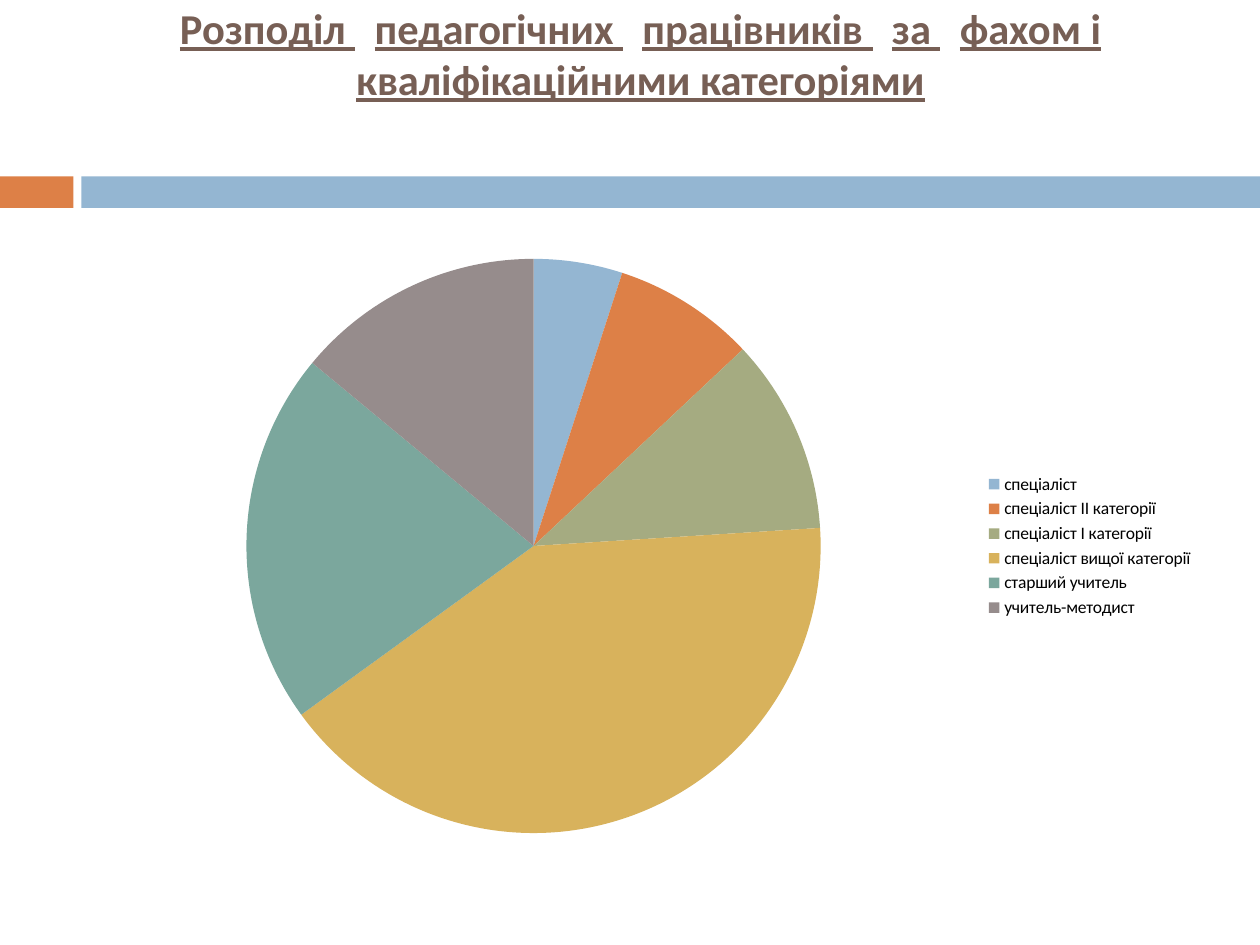
import pptx
import pptx.chart.data
import pptx.dml.color
import pptx.enum.chart
import pptx.enum.shapes
import pptx.enum.text
import pptx.util

Pt = pptx.util.Pt
SLIDE_WIDTH, SLIDE_HEIGHT = 720, 540
BAND_TOP, BAND_HEIGHT = 100.8, 18
BLUE, ORANGE, BROWN = "94B6D2", "DD8047", "775F55"

# category: (share in percent, colour)
CATEGORIES = {
    "спеціаліст": (5, BLUE),
    "спеціаліст ІІ категорії": (8, ORANGE),
    "спеціаліст І категорії": (11, "A5AB81"),
    "спеціаліст вищої категорії": (41, "D8B25C"),
    "старший учитель": (21, "7BA79D"),
    "учитель-методист": (14, "968C8C"),
}
TITLE_PARTS = ["Розподіл", "педагогічних", "працівників", "за", "фахом і",
               "кваліфікаційними категоріями"]


def colour(hex_string):
    return pptx.dml.color.RGBColor.from_string(hex_string)


def paint(fill, hex_string):
    fill.solid()
    fill.fore_color.rgb = colour(hex_string)


class Deck:
    font_name = "Calibri"

    def __init__(self, presentation):
        self.slide = presentation.slides.add_slide(presentation.slide_layouts[5])

    def title(self, parts, left, top, width, height, size, gap):
        """Join the parts with single spaces, each widened by gap points."""
        heading = self.slide.shapes.title
        heading.left, heading.top = Pt(left), Pt(top)
        heading.width, heading.height = Pt(width), Pt(height)
        frame = heading.text_frame
        frame.word_wrap = True
        frame.auto_size = pptx.enum.text.MSO_AUTO_SIZE.NONE
        frame.vertical_anchor = pptx.enum.text.MSO_ANCHOR.TOP
        frame.margin_top = Pt(1)
        line = frame.paragraphs[0]
        line.alignment = pptx.enum.text.PP_ALIGN.CENTER
        line.font.name, line.font.size = self.font_name, Pt(size)
        line.font.bold = line.font.underline = True
        line.font.color.rgb = colour(BROWN)
        for index, part in enumerate(parts):
            if index:
                space = line.add_run()
                space.text = " "
                space.font._element.set("spc", str(gap * 100))
            line.add_run().text = part

    def bar(self, left, top, width, height, fill):
        bar = self.slide.shapes.add_shape(
            pptx.enum.shapes.MSO_SHAPE.RECTANGLE,
            Pt(left), Pt(top), Pt(width), Pt(height))
        bar.shadow.inherit = False
        paint(bar.fill, fill)
        bar.line.fill.background()

    def pie(self, categories, left, top, width, height, size):
        data = pptx.chart.data.CategoryChartData()
        data.categories = list(categories)
        data.add_series("Series 1", [share for share, _ in categories.values()])
        chart = self.slide.shapes.add_chart(
            pptx.enum.chart.XL_CHART_TYPE.PIE,
            Pt(left), Pt(top), Pt(width), Pt(height), data).chart
        chart.has_title = False
        chart.font.name, chart.font.size = self.font_name, Pt(size)
        chart.font.color.rgb = colour("000000")
        chart.has_legend = True
        chart.legend.position = pptx.enum.chart.XL_LEGEND_POSITION.RIGHT
        chart.legend.include_in_layout = False
        plot = chart.plots[0]
        plot.vary_by_categories = True
        for index, (_, fill) in enumerate(categories.values()):
            paint(plot.series[0].points[index].format.fill, fill)


def main():
    presentation = pptx.Presentation()
    presentation.slide_width = Pt(SLIDE_WIDTH)
    presentation.slide_height = Pt(SLIDE_HEIGHT)
    deck = Deck(presentation)
    accent_width, band_left = 42, 46.5
    deck.bar(0, BAND_TOP, accent_width, BAND_HEIGHT, ORANGE)
    deck.bar(band_left, BAND_TOP, SLIDE_WIDTH - band_left, BAND_HEIGHT, BLUE)
    deck.title(TITLE_PARTS, 48, 0, 636, 106, size=24.3, gap=11)
    deck.pie(CATEGORIES, 48, 138, 641.5, 348, size=10)
    presentation.save("out.pptx")


if __name__ == "__main__":
    main()
